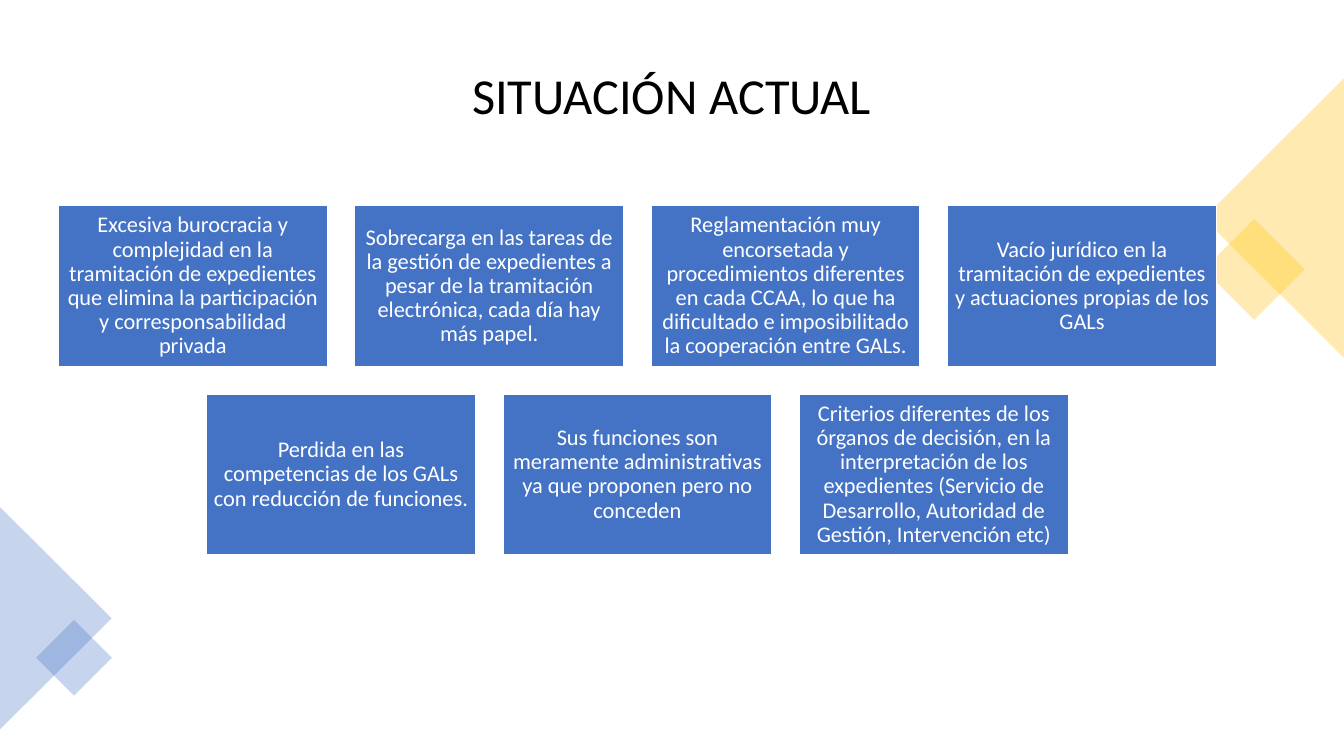
"""Build the "Situación actual" slide: a title, corner ornaments and two rows of cards."""
from lxml import etree
from pptx import Presentation
from pptx import util as u
from pptx.dml.color import RGBColor
from pptx.enum import shapes, text
from pptx.oxml import ns

BLUE = RGBColor(0x44, 0x72, 0xC4)
YELLOW = RGBColor(0xFF, 0xC0, 0x00)
WHITE = RGBColor(0xFF, 0xFF, 0xFF)
BLACK = RGBColor(0x00, 0x00, 0x00)

RECTANGLE = shapes.MSO_SHAPE.RECTANGLE
TRIANGLE = shapes.MSO_SHAPE.ISOSCELES_TRIANGLE

ORNAMENTS = [
    (RECTANGLE, (30.71, 5.89, 1.8, 1.8), 45, YELLOW),
    (TRIANGLE, (28.58, 3.73, 7.04, 3.53), 270, YELLOW),
    (TRIANGLE, (-1.4, 14.17, 5.61, 2.82), 90, BLUE),
    (RECTANGLE, (1.19, 15.9, 1.35, 1.35), 45, BLUE),
]

CARD_ROWS = [
    [
        "Excesiva burocracia y complejidad en la tramitación de expedientes que elimina "
        "la participación y corresponsabilidad privada",
        "Sobrecarga en las tareas de la gestión de expedientes a pesar de la tramitación "
        "electrónica, cada día hay más papel.",
        "Reglamentación muy encorsetada y procedimientos diferentes en cada CCAA, lo que "
        "ha dificultado e imposibilitado la cooperación entre GALs.",
        "Vacío jurídico en la tramitación de expedientes y actuaciones propias de los GALs",
    ],
    [
        "Perdida en las competencias de los GALs con reducción de funciones.",
        "Sus funciones son meramente administrativas ya que proponen pero no conceden",
        "Criterios diferentes de los órganos de decisión, en la interpretación de los "
        "expedientes (Servicio de Desarrollo, Autoridad de Gestión, Intervención etc)",
    ],
]
CARD_LEFT, CARD_TOP = 1.47, 5.18
CARD_WIDTH, CARD_HEIGHT = 6.78, 4.06
COLUMN_STEP, ROW_STEP = 7.47, 4.75
CARD_INSET = u.Cm(0.17)


def set_attributes(target, values):
    for name, value in values.items():
        setattr(target, name, value)


class SlideBuilder:
    def __init__(self, slide, font_name="Calibri", opacity=30):
        self.slide = slide
        self.font_name = font_name
        self.opacity = opacity

    def fill_text(self, shape, words, size, color, inset=None):
        frame = shape.text_frame
        frame.text = words
        set_attributes(frame, {
            "word_wrap": True,
            "auto_size": text.MSO_AUTO_SIZE.NONE,
            "vertical_anchor": text.MSO_ANCHOR.MIDDLE,
        })
        if inset is not None:
            sides = ("left", "top", "right", "bottom")
            set_attributes(frame, {f"margin_{side}": inset for side in sides})
        paragraph = frame.paragraphs[0]
        set_attributes(paragraph, {
            "alignment": text.PP_ALIGN.CENTER,
            "line_spacing": 0.9,
            "space_after": u.Pt(6),
        })
        font = paragraph.runs[0].font
        set_attributes(font, {"name": self.font_name, "size": u.Pt(size)})
        font.color.rgb = color

    def title(self, words, box):
        shape = self.slide.shapes.title
        names = ("left", "top", "width", "height")
        set_attributes(shape, dict(zip(names, map(u.Cm, box))))
        self.fill_text(shape, words, 36, BLACK)

    def filled_shape(self, kind, box, color):
        shape = self.slide.shapes.add_shape(kind, *map(u.Cm, box))
        shape.shadow.inherit = False
        shape.fill.solid()
        shape.fill.fore_color.rgb = color
        return shape

    def ornament(self, kind, box, rotation, color):
        shape = self.filled_shape(kind, box, color)
        shape.rotation = rotation
        shape.line.fill.background()
        tint = shape.element.spPr.find(".//" + ns.qn("a:srgbClr"))
        etree.SubElement(tint, ns.qn("a:alpha"), val=str(self.opacity * 1000))

    def card(self, words, box):
        shape = self.filled_shape(RECTANGLE, box, BLUE)
        shape.line.color.rgb = WHITE
        shape.line.width = u.Pt(1)
        self.fill_text(shape, words, 16, WHITE, CARD_INSET)


def main():
    presentation = Presentation()
    presentation.slide_width = u.Cm(33.87)
    presentation.slide_height = u.Cm(19.05)
    builder = SlideBuilder(presentation.slides.add_slide(presentation.slide_layouts[5]))

    builder.title("SITUACIÓN ACTUAL", (1.78, 0.89, 30.3, 3.15))
    for ornament in ORNAMENTS:
        builder.ornament(*ornament)

    longest = max(map(len, CARD_ROWS))
    for row, cards in enumerate(CARD_ROWS):
        row_left = CARD_LEFT + (longest - len(cards)) * COLUMN_STEP / 2
        top = CARD_TOP + row * ROW_STEP
        for column, words in enumerate(cards):
            left = row_left + column * COLUMN_STEP
            builder.card(words, (left, top, CARD_WIDTH, CARD_HEIGHT))

    presentation.save("out.pptx")


if __name__ == "__main__":
    main()
